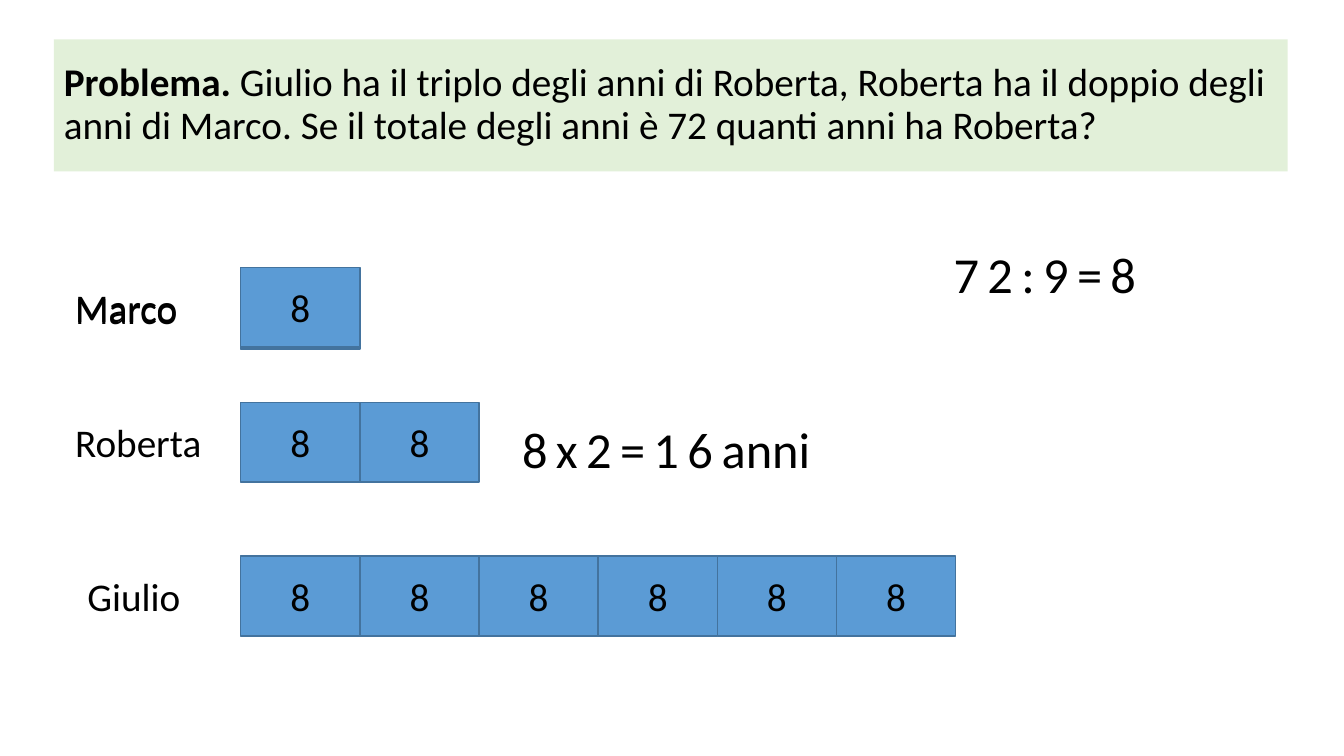
"""Build the slide that solves the ages problem with bar models."""
from dataclasses import dataclass

from pptx import Presentation
from pptx.dml.color import RGBColor
from pptx.enum.shapes import MSO_SHAPE
from pptx.enum.text import MSO_ANCHOR, MSO_AUTO_SIZE, PP_ALIGN
from pptx.util import Pt

RECT = MSO_SHAPE.RECTANGLE
MIDDLE = MSO_ANCHOR.MIDDLE
GROW, FIXED = MSO_AUTO_SIZE.SHAPE_TO_FIT_TEXT, MSO_AUTO_SIZE.NONE
LEFT, CENTER = PP_ALIGN.LEFT, PP_ALIGN.CENTER


@dataclass(frozen=True)
class Theme:
    font: str = "Calibri"
    body: int = 28
    formula: int = 36
    text: RGBColor = RGBColor(0x00, 0x00, 0x00)
    banner: RGBColor = RGBColor(0xE2, 0xF0, 0xD9)
    unit: RGBColor = RGBColor(0x5B, 0x9B, 0xD5)
    edge: RGBColor = RGBColor(0x43, 0x73, 0x9E)


THEME = Theme()


def style(p, size):
    for r in p.runs:
        r.font.name = THEME.font
        r.font.size = Pt(size)
        r.font.color.rgb = THEME.text


def add_label(s, left, top, width, height, parts, size):
    tf = s.shapes.add_textbox(Pt(left), Pt(top), Pt(width), Pt(height)).text_frame
    tf.word_wrap = False
    tf.auto_size = GROW
    p = tf.paragraphs[0]
    for text, spacing in parts:
        r = p.add_run()
        r.text = text
        if spacing:
            r.font._element.set("spc", str(spacing * 100))
    style(p, size)


prs = Presentation()
prs.slide_width, prs.slide_height = Pt(960), Pt(540)
s = prs.slides.add_slide(prs.slide_layouts[5])

title = s.shapes.title
title.left, title.top, title.width, title.height = Pt(38.4), Pt(28.2), Pt(881.3), Pt(94.2)
title.fill.solid()
title.fill.fore_color.rgb = THEME.banner
tf = title.text_frame
tf.word_wrap = True
tf.auto_size = FIXED
tf.vertical_anchor = MIDDLE
p = tf.paragraphs[0]
p.alignment = LEFT
p.line_spacing = 0.9
for text, bold in (
    ("Problema. ", True),
    ("Giulio ha il triplo degli anni di Roberta, Roberta ha il doppio degli anni "
     "di Marco. Se il totale degli anni è 72 quanti anni ha Roberta?", False),
):
    r = p.add_run()
    r.text = text
    r.font.bold = bold
style(p, THEME.body)

BAR_LEFT, UNIT_W, UNIT_H = 172, 85.1, 57
LABEL_DROP, LABEL_H = 7.9, 41.2
bars = [
    ("Marco", 1, 192.2, 46.6, 88.4),
    ("Marco", 1, 191, 46.6, 88.4),
    ("Roberta", 2, 287.4, 46.6, 106),
    ("Giulio", 6, 397.2, 55.3, 81.5),
]
for name, units, top, label_left, label_w in bars:
    for i in range(units):
        sp = s.shapes.add_shape(RECT, Pt(BAR_LEFT + i * UNIT_W), Pt(top), Pt(UNIT_W), Pt(UNIT_H))
        sp.shadow.inherit = False
        sp.fill.solid()
        sp.fill.fore_color.rgb = THEME.unit
        sp.line.color.rgb = THEME.edge
        sp.line.width = Pt(1)
        tf = sp.text_frame
        tf.text = "8"
        tf.vertical_anchor = MIDDLE
        p = tf.paragraphs[0]
        p.alignment = CENTER
        style(p, THEME.body)
    add_label(s, label_left, top + LABEL_DROP, label_w, LABEL_H, [(name, 0)], THEME.body)

add_label(s, 674, 170, 152.6, 51, [("72:9=8", 6)], THEME.formula)
add_label(s, 365.8, 294.8, 222.5, 51, [("8x2=16", 6), ("anni", 0)], THEME.formula)

prs.save("out.pptx")
